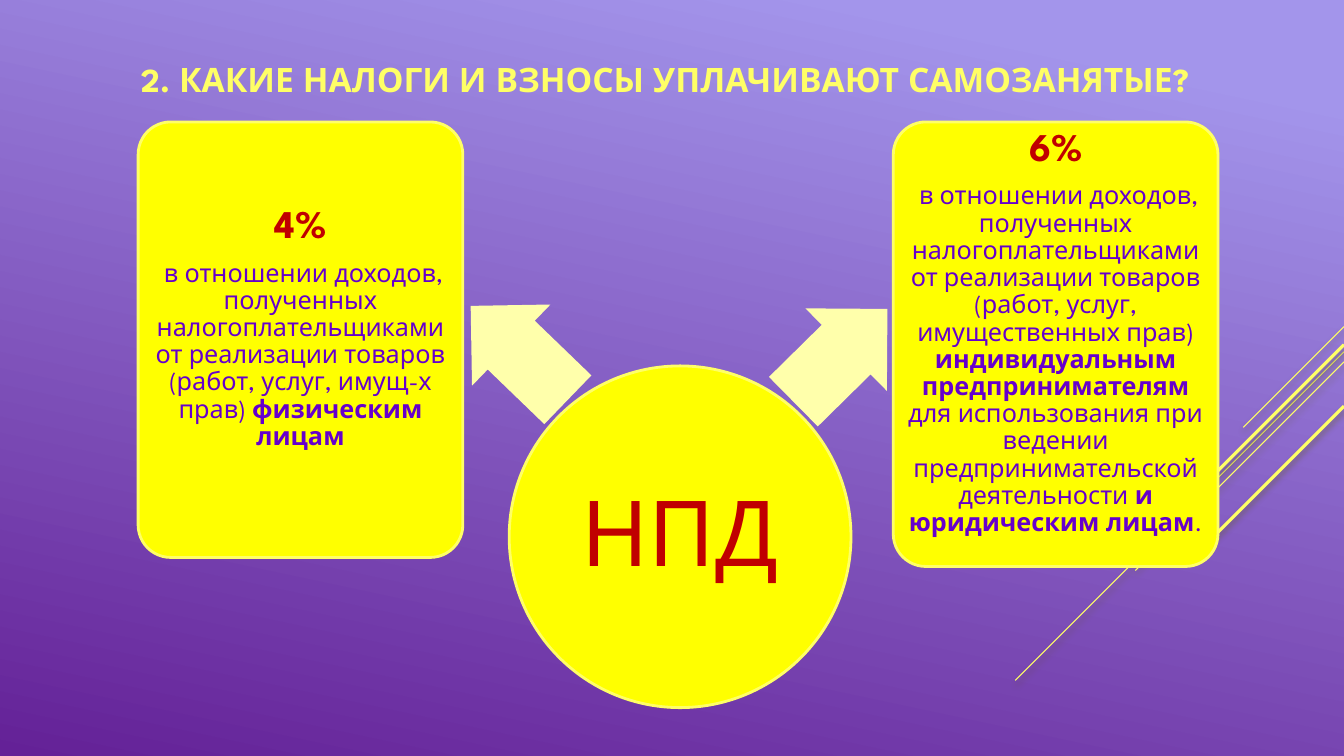
from dataclasses import dataclass

from lxml.etree import SubElement
from pptx import Presentation
from pptx.dml.color import RGBColor
from pptx.enum.shapes import MSO_CONNECTOR, MSO_SHAPE
from pptx.enum.text import MSO_ANCHOR, PP_ALIGN
from pptx.oxml.ns import qn
from pptx.util import Inches, Pt


@dataclass(frozen=True)
class Theme:
    """Colours, type sizes and font of the slide."""
    font: str = "League Spartan"
    bg_top: str = "A395EB"
    bg_bottom: str = "642197"
    accent: str = "FFFF66"
    fill: str = "FFFF00"
    arrow: str = "FFFFAB"
    line_shadow: str = "5A5A00"
    strong: str = "C00000"
    body: str = "6600CC"
    title_pt: int = 24
    circle_pt: int = 65
    rate_pt: int = 28
    body_pt: int = 18


THEME = Theme()
SPACE_AFTER = 0.35


def rgb(value):
    """Turn a hex string into a colour."""
    return RGBColor.from_string(value)


def set_background(s):
    """Fill the slide with the violet gradient."""
    fill = s.background.fill
    fill.gradient()
    fill.gradient_angle = 258
    stops = ((0.1, THEME.bg_top), (1, THEME.bg_bottom))
    for stop, (position, color) in zip(fill.gradient_stops, stops):
        stop.position = position
        stop.color.rgb = rgb(color)


def add_diagonal(s, y, length, width):
    """Draw a shadowed 45-degree line down and left from the right edge."""
    right = 13.33
    c = s.shapes.add_connector(
        MSO_CONNECTOR.STRAIGHT, Inches(right), Inches(y),
        Inches(right - length), Inches(y + length))
    c.line.color.rgb = rgb(THEME.accent)
    c.line.width = Pt(width)
    effects = SubElement(c._element.spPr, qn("a:effectLst"))
    shadow = SubElement(effects, qn("a:outerShdw"), blurRad=str(Pt(4.5)),
                        dist=str(Pt(3)), dir="5400000", rotWithShape="0")
    color = SubElement(shadow, qn("a:srgbClr"), val=THEME.line_shadow)
    SubElement(color, qn("a:alpha"), val="48000")


def add_runs(p, runs, size, color):
    """Add centred (text, bold) runs to a paragraph."""
    p.alignment = PP_ALIGN.CENTER
    for text, bold in runs:
        r = p.add_run()
        r.text = text
        r.font.name = THEME.font
        r.font.size = Pt(size)
        r.font.bold = bold
        r.font.color.rgb = rgb(color)


def set_frame(sp, anchor, side, top, bottom):
    """Prepare the text frame of a shape and return it."""
    tf = sp.text_frame
    tf.word_wrap = True
    tf.vertical_anchor = anchor
    tf.margin_left = tf.margin_right = Inches(side)
    tf.margin_top = Inches(top)
    tf.margin_bottom = Inches(bottom)
    return tf


def add_title(s, text):
    """Add the slide heading."""
    sp = s.shapes.add_textbox(Inches(0.35), Inches(0.24), Inches(12.49), Inches(0.8))
    tf = set_frame(sp, MSO_ANCHOR.BOTTOM, 0.1, 0.05, 0.06)
    add_runs(tf.paragraphs[0], [(text, True)], THEME.title_pt, THEME.accent)


def add_figure(s, kind, box, color, outlined=True):
    """Add a flat filled shape, outlined on request."""
    sp = s.shapes.add_shape(kind, *map(Inches, box))
    sp.shadow.inherit = False
    sp.fill.solid()
    sp.fill.fore_color.rgb = rgb(color)
    if outlined:
        sp.line.color.rgb = rgb(THEME.accent)
        sp.line.width = Pt(2)
    else:
        sp.line.fill.background()
    return sp


def add_circle(s, text):
    """Add the central circle with the tax name."""
    sp = add_figure(s, MSO_SHAPE.OVAL, (5.05, 3.63, 3.39, 3.39), THEME.fill)
    p = set_frame(sp, MSO_ANCHOR.MIDDLE, 0.05, 0.05, 0.05).paragraphs[0]
    p.line_spacing = 0.9
    add_runs(p, [(text, False)], THEME.circle_pt, THEME.strong)


def add_arrow(s, box, rotation):
    """Add a block arrow from the circle to a card."""
    sp = add_figure(s, MSO_SHAPE.LEFT_ARROW, box, THEME.arrow, outlined=False)
    sp.adjustments[0] = 0.6
    sp.adjustments[1] = 0.5
    sp.rotation = rotation


def add_card(s, left, height, rate, runs):
    """Add a rounded card with a tax rate and its explanation."""
    sp = add_figure(s, MSO_SHAPE.ROUNDED_RECTANGLE, (left, 1.21, 3.22, height), THEME.fill)
    sp.adjustments[0] = 0.1
    tf = set_frame(sp, MSO_ANCHOR.MIDDLE, 0.04, 0.06, 0.3)
    head, body = tf.paragraphs[0], tf.add_paragraph()
    head.line_spacing = body.line_spacing = 0.9
    head.space_after = Pt(THEME.rate_pt * SPACE_AFTER)
    add_runs(head, [(rate, True)], THEME.rate_pt, THEME.strong)
    add_runs(body, runs, THEME.body_pt, THEME.body)


def main():
    """Build the slide and save it."""
    prs = Presentation()
    prs.slide_width, prs.slide_height = Inches(13.33), Inches(7.5)
    s = prs.slides.add_slide(prs.slide_layouts[6])
    set_background(s)
    for y, length, width in ((3.24, 1, 0.75), (3.49, 3.26, 0.75), (3.59, 2.07, 0.75),
                             (3.42, 1.91, 2.25), (4.03, 1.39, 2.25)):
        add_diagonal(s, y, length, width)
    add_title(s, "2. КАКИЕ НАЛОГИ И ВЗНОСЫ УПЛАЧИВАЮТ САМОЗАНЯТЫЕ?")
    add_circle(s, "НПД")
    income = (" в отношении доходов, полученных налогоплательщиками "
              "от реализации товаров (работ, услуг, ")
    add_arrow(s, (4.48, 2.94, 1.34, 1.12), 44)
    add_card(s, 1.37, 4.32, "4%", [
        (income + "имущ-х прав) ", False),
        ("физическим лицам", True)])
    add_arrow(s, (7.68, 2.95, 1.31, 1.15), 135.4)
    add_card(s, 8.86, 4.41, "6%", [
        (income + "имущественных прав) ", False),
        ("индивидуальным предпринимателям ", True),
        ("для использования при ведении предпринимательской деятельности ", False),
        ("и юридическим лицам", True),
        (".", False)])
    prs.save("out.pptx")


if __name__ == "__main__":
    main()
